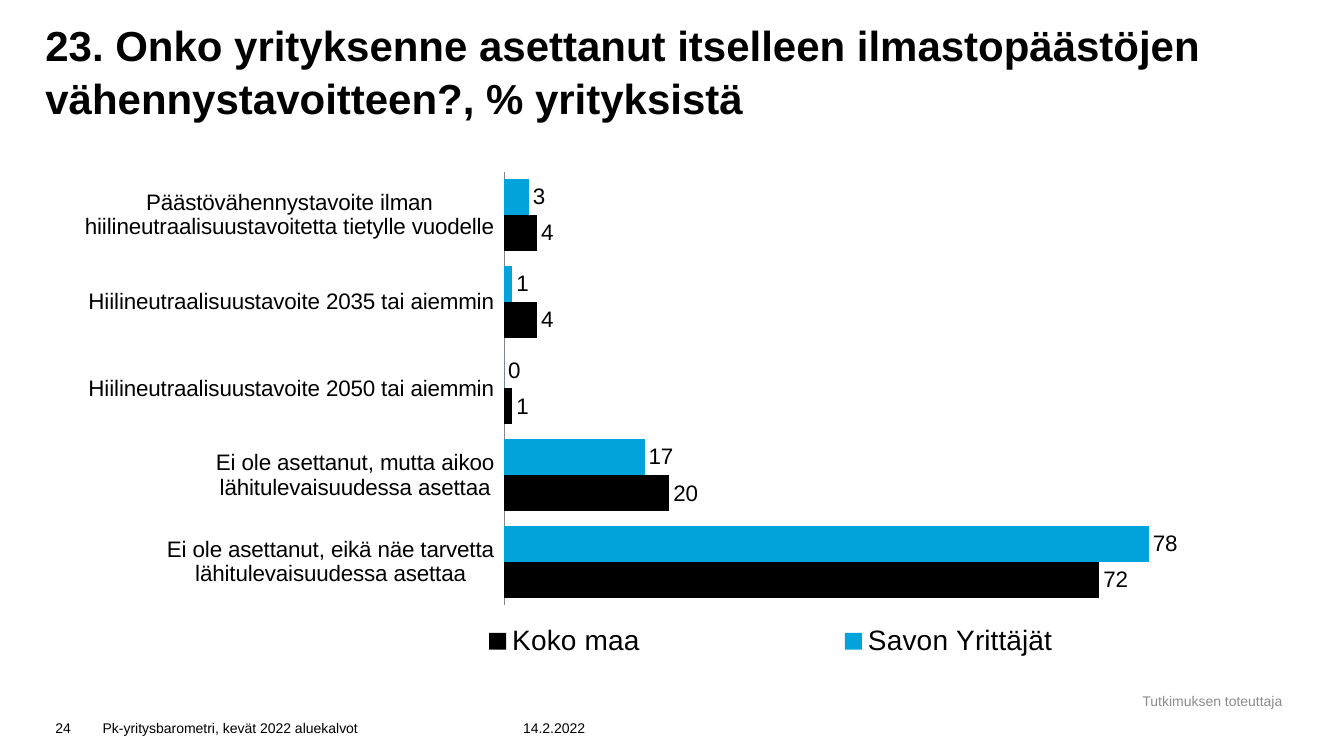
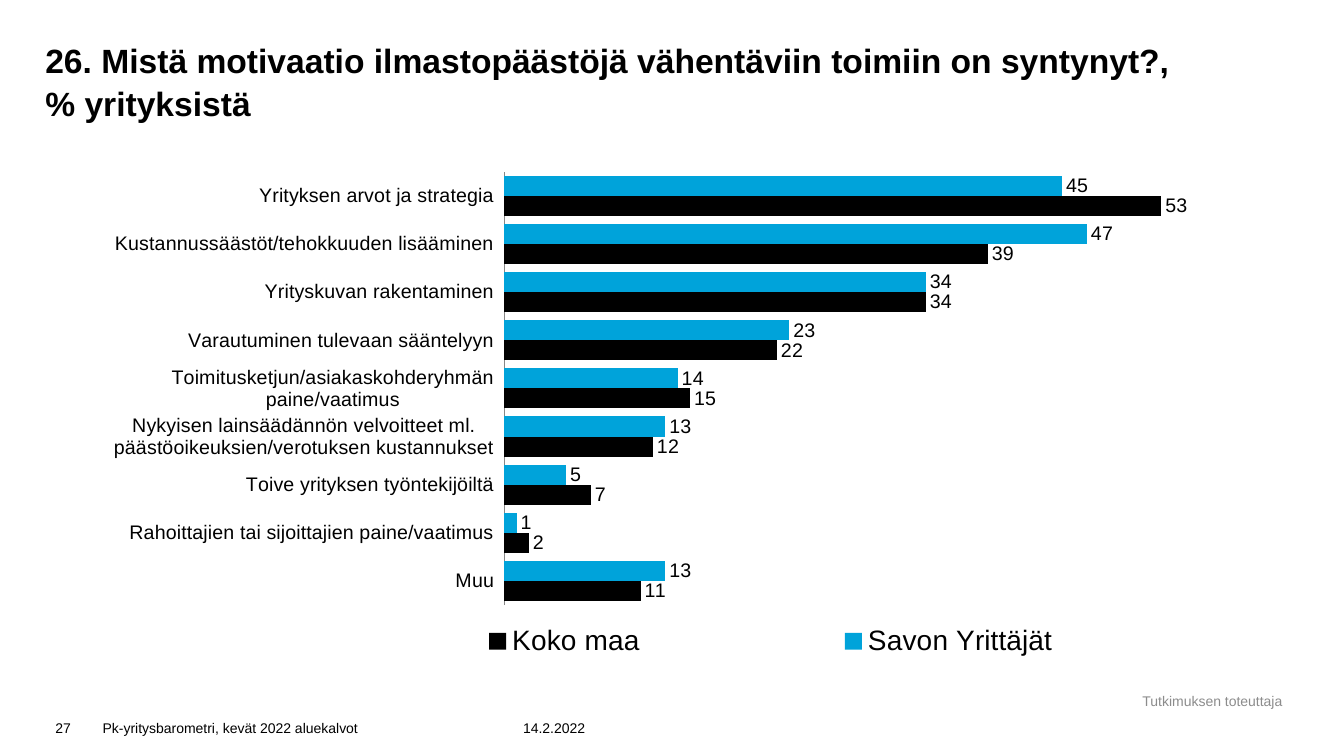
from dataclasses import dataclass

from lxml.etree import Element, SubElement
from pptx import Presentation
from pptx.chart.chart import Chart
from pptx.chart.data import CategoryChartData
from pptx.dml.color import RGBColor
from pptx.enum.chart import XL_CHART_TYPE as ChartType
from pptx.enum.chart import XL_LABEL_POSITION as LabelPosition
from pptx.enum.chart import XL_LEGEND_POSITION as LegendPosition
from pptx.enum.chart import XL_TICK_LABEL_POSITION as TickLabels
from pptx.enum.chart import XL_TICK_MARK as TickMark
from pptx.enum.text import MSO_ANCHOR as Anchor
from pptx.enum.text import PP_ALIGN as Align
from pptx.oxml.ns import qn
from pptx.slide import Slide
from pptx.util import Pt

PX = 9144  # 100 px to the inch
FONT = "Arial"
BLACK, BLUE, GREY, AXIS_GREY = "000000", "00A3DA", "8C8C8C", "868686"
REGION, COUNTRY = "Savon Yrittäjät", "Koko maa"
SERIES_COLORS = (BLUE, BLACK)


@dataclass(frozen=True)
class Box:
    left: int
    top: int
    width: int
    height: int

    def emu(self) -> tuple[int, ...]:
        return tuple(n * PX for n in (self.left, self.top, self.width, self.height))


@dataclass(frozen=True)
class TextStyle:
    size: int = 10
    color: str = BLACK
    bold: bool = False
    anchor: Anchor = Anchor.BOTTOM
    align: Align = Align.LEFT
    inset: bool = True
    spacing: float = 1.0


@dataclass(frozen=True)
class Answer:
    label: str
    region: int
    country: int


@dataclass(frozen=True)
class Question:
    number: int
    title: str
    title_size: int
    label_size: int
    axis_max: int
    answers: tuple[Answer, ...]


TITLE_BOX = Box(45, 0, 1230, 122)
CHART_BOX = Box(45, 155, 1230, 512)
NUMBER_BOX = Box(45, 700, 47, 35)
SURVEY_BOX = Box(92, 700, 417, 35)
DATE_BOX = Box(509, 700, 87, 35)
CREDIT_BOX = Box(1116, 682, 173, 26)
FOOTER = TextStyle()
CREDIT = TextStyle(color=GREY, anchor=Anchor.MIDDLE, align=Align.CENTER)

# Left, top, width and height as shares of the chart
PLOT_LAYOUT = (0.37, 0.03, 0.6, 0.84)
LEGEND_LAYOUT = (0.2, 0.9, 0.77, 0.08)

QUESTIONS = (
    Question(
        24,
        "23. Onko yrityksenne asettanut itselleen ilmastopäästöjen "
        "vähennystavoitteen?, % yrityksistä",
        30, 16, 90,
        (
            Answer("Päästövähennystavoite ilman hiilineutraalisuustavoitetta "
                   "tietylle vuodelle", 3, 4),
            Answer("Hiilineutraalisuustavoite 2035 tai aiemmin", 1, 4),
            Answer("Hiilineutraalisuustavoite 2050 tai aiemmin", 0, 1),
            Answer("Ei ole asettanut, mutta aikoo lähitulevaisuudessa asettaa", 17, 20),
            Answer("Ei ole asettanut, eikä näe tarvetta lähitulevaisuudessa "
                   "asettaa", 78, 72),
        ),
    ),
    Question(
        27,
        "26. Mistä motivaatio ilmastopäästöjä vähentäviin toimiin on syntynyt?,\v"
        "% yrityksistä",
        24, 14, 60,
        (
            Answer("Yrityksen arvot ja strategia", 45, 53),
            Answer("Kustannussäästöt/tehokkuuden lisääminen", 47, 39),
            Answer("Yrityskuvan rakentaminen", 34, 34),
            Answer("Varautuminen tulevaan sääntelyyn", 23, 22),
            Answer("Toimitusketjun/asiakaskohderyhmän paine/vaatimus", 14, 15),
            Answer("Nykyisen lainsäädännön velvoitteet ml. "
                   "päästöoikeuksien/verotuksen kustannukset", 13, 12),
            Answer("Toive yrityksen työntekijöiltä", 5, 7),
            Answer("Rahoittajien tai sijoittajien paine/vaatimus", 1, 2),
            Answer("Muu", 13, 11),
        ),
    ),
)


def rgb(color: str) -> RGBColor:
    return RGBColor.from_string(color)


def set_font(font, size: int, color: str = BLACK, bold: bool = False) -> None:
    font.name = FONT
    font.size = Pt(size)
    font.bold = bold
    font.color.rgb = rgb(color)


def add_text(slide: Slide, box: Box, text: str, style: TextStyle) -> None:
    frame = slide.shapes.add_textbox(*box.emu()).text_frame
    frame.word_wrap = True
    frame.vertical_anchor = style.anchor
    if not style.inset:
        frame.margin_left = frame.margin_right = 0
        frame.margin_top = frame.margin_bottom = 0
    paragraph = frame.paragraphs[0]
    paragraph.text = text
    paragraph.alignment = style.align
    paragraph.line_spacing = style.spacing
    set_font(paragraph.font, style.size, style.color, style.bold)


def manual_layout(shares: tuple[float, ...], inner: bool = False):
    """Build a c:layout element that fixes a chart part's place."""
    layout = Element(qn("c:layout"))
    manual = SubElement(layout, qn("c:manualLayout"))
    settings = [("layoutTarget", "inner")] if inner else []
    settings += [("xMode", "edge"), ("yMode", "edge")]
    settings += zip("xywh", map(str, shares))
    for tag, value in settings:
        SubElement(manual, qn(f"c:{tag}")).set("val", value)
    return layout


def place_plot(chart: Chart) -> None:
    plot_area = chart._chartSpace.chart.plotArea
    for automatic in plot_area.findall(qn("c:layout")):
        plot_area.remove(automatic)
    plot_area.insert(0, manual_layout(PLOT_LAYOUT, inner=True))


def add_legend(chart: Chart) -> None:
    chart.has_legend = True
    legend = chart.legend
    legend.position = LegendPosition.RIGHT
    legend.include_in_layout = False
    set_font(legend.font, 20)
    position = legend._element.find(qn("c:legendPos"))
    for automatic in legend._element.findall(qn("c:layout")):
        legend._element.remove(automatic)
    position.addnext(manual_layout(LEGEND_LAYOUT))


def style_axes(chart: Chart, question: Question) -> None:
    answers = chart.category_axis
    answers.reverse_order = True
    answers.major_tick_mark = answers.minor_tick_mark = TickMark.NONE
    answers.tick_label_position = TickLabels.LOW
    answers.format.line.color.rgb = rgb(AXIS_GREY)
    answers.format.line.width = Pt(0.75)
    set_font(answers.tick_labels.font, question.label_size)
    percent = chart.value_axis
    percent.minimum_scale, percent.maximum_scale = 0, question.axis_max
    percent.has_major_gridlines = False
    percent.visible = False


def add_bars(slide: Slide, question: Question) -> None:
    data = CategoryChartData(number_format="#,##0")
    data.categories = [answer.label for answer in question.answers]
    data.add_series(REGION, [answer.region for answer in question.answers])
    data.add_series(COUNTRY, [answer.country for answer in question.answers])
    chart = slide.shapes.add_chart(
        ChartType.BAR_CLUSTERED, *CHART_BOX.emu(), data
    ).chart
    chart.has_title = False
    set_font(chart.font, 20)
    style_axes(chart, question)
    plot = chart.plots[0]
    plot.gap_width, plot.overlap = 40, 0
    plot.vary_by_categories = False
    for series, color in zip(plot.series, SERIES_COLORS):
        series.format.fill.solid()
        series.format.fill.fore_color.rgb = rgb(color)
        series.invert_if_negative = False
        labels = series.data_labels
        labels.show_value = True
        labels.position = LabelPosition.OUTSIDE_END
        labels.number_format = "#,##0"
        labels.number_format_is_linked = False
        set_font(labels.font, question.label_size)
    place_plot(chart)
    add_legend(chart)


def add_footer(slide: Slide, number: int) -> None:
    add_text(slide, CREDIT_BOX, "Tutkimuksen toteuttaja", CREDIT)
    add_text(slide, SURVEY_BOX, "Pk-yritysbarometri, kevät 2022 aluekalvot", FOOTER)
    add_text(slide, NUMBER_BOX, str(number), FOOTER)
    add_text(slide, DATE_BOX, "14.2.2022", FOOTER)


def main() -> None:
    deck = Presentation()
    deck.slide_width, deck.slide_height = 1333 * PX, 750 * PX
    blank = deck.slide_layouts[6]
    for question in QUESTIONS:
        slide = deck.slides.add_slide(blank)
        title_style = TextStyle(question.title_size, bold=True, inset=False, spacing=1.05)
        add_text(slide, TITLE_BOX, question.title, title_style)
        add_bars(slide, question)
        add_footer(slide, question.number)
    deck.save("out.pptx")


if __name__ == "__main__":
    main()
